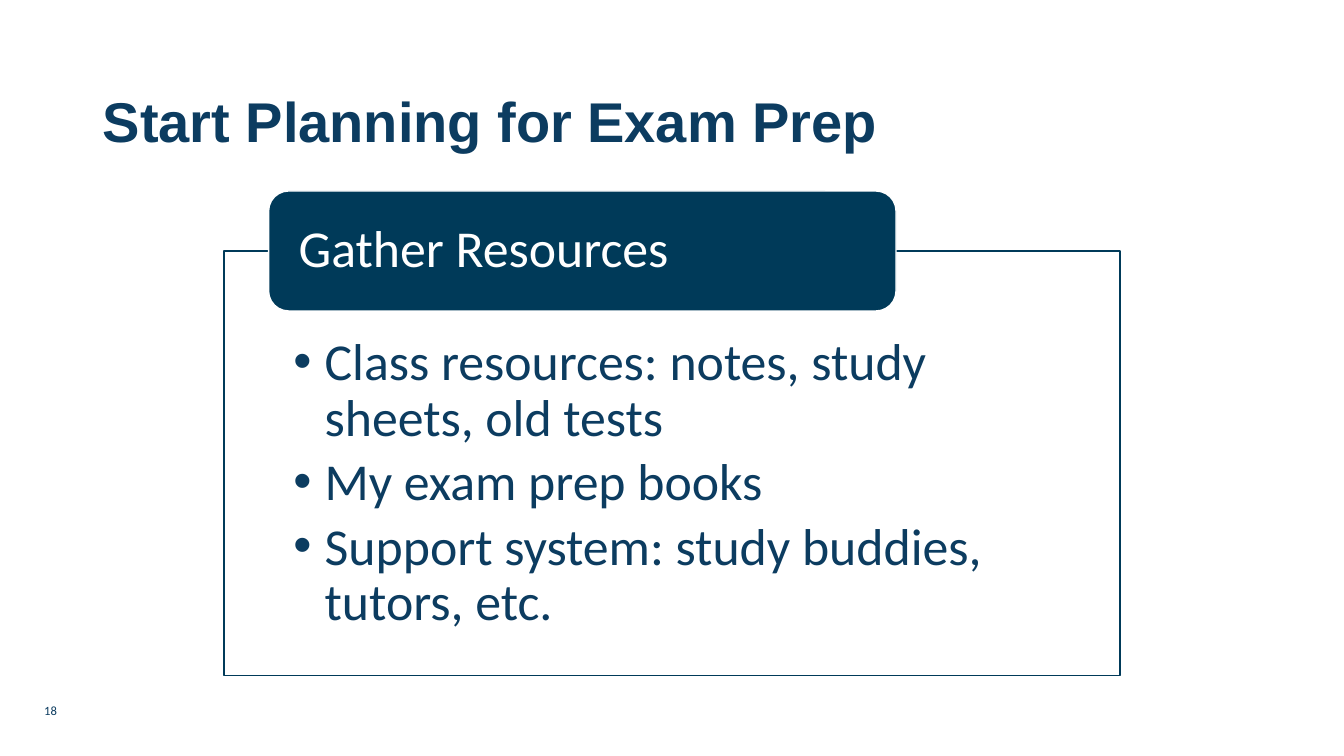
from pptx import Presentation
from pptx.dml.color import RGBColor
from pptx.enum.shapes import MSO_SHAPE
from pptx.enum.text import MSO_ANCHOR, MSO_AUTO_SIZE, PP_ALIGN
from pptx.util import Inches, Pt

COLORS = {"text": "0C3C60", "panel": "003A59", "white": "FFFFFF"}
RESOURCES = [
    "Class resources: notes, study sheets, old tests",
    "My exam prep books",
    "Support system: study buddies, tutors, etc.",
]


def rgb(name):
    return RGBColor.from_string(COLORS[name])


def place(shape, box):
    shape.left, shape.top, shape.width, shape.height = map(Inches, box)


def set_frame(frame, anchor, insets):
    """Fix the frame's size, anchor and insets (left, top, right, bottom)."""
    left, top, right, bottom = map(Inches, insets)
    settings = {
        "word_wrap": True, "auto_size": MSO_AUTO_SIZE.NONE, "vertical_anchor": anchor,
        "margin_left": left, "margin_top": top,
        "margin_right": right, "margin_bottom": bottom,
    }
    for key, value in settings.items():
        setattr(frame, key, value)


def format_paragraph(paragraph, size, color, font="Calibri", bold=False, spacing=0.9, after=0):
    layout = {
        "alignment": PP_ALIGN.LEFT, "line_spacing": spacing,
        "space_before": Pt(0), "space_after": Pt(after),
    }
    for key, value in layout.items():
        setattr(paragraph, key, value)
    for key, value in {"name": font, "size": Pt(size), "bold": bold}.items():
        setattr(paragraph.font, key, value)
    paragraph.font.color.rgb = rgb(color)


def outline(shape, fill, line):
    shape.fill.solid()
    shape.fill.fore_color.rgb = rgb(fill)
    shape.line.color.rgb = rgb(line)
    shape.line.width = Pt(1)


def add_title(slide, box):
    title = slide.shapes.title
    place(title, box)
    title.text_frame.text = "Start Planning for Exam Prep"
    set_frame(title.text_frame, MSO_ANCHOR.MIDDLE, (0.1, 0.05, 0.1, 0.05))
    format_paragraph(title.text_frame.paragraphs[0], 40, "text", "Arial", True)


def add_page_number(slide, box):
    number = slide.shapes.add_textbox(*map(Inches, box))
    number.text_frame.text = "18"
    set_frame(number.text_frame, MSO_ANCHOR.TOP, (0.1, 0.05, 0.1, 0.05))
    format_paragraph(number.text_frame.paragraphs[0], 9, "text", spacing=1.0)


def add_resource_panel(slide, box):
    """Outlined bullet list with a heading tab across its top edge."""
    left, top, width, height = box
    panel = slide.placeholders[1]
    place(panel, box)
    outline(panel, "white", "panel")
    set_frame(panel.text_frame, MSO_ANCHOR.TOP, (0.69, 0.84, 0.69, 0.29))
    panel.text_frame.text = "\n".join(RESOURCES)
    for item in panel.text_frame.paragraphs:
        properties = item._p.get_or_add_pPr()
        properties.set("marL", str(Inches(0.31)))
        properties.set("indent", str(-Inches(0.31)))
        format_paragraph(item, 37, "text", after=6)

    tab_height = 1.19
    tab_box = (left + width * 0.05, top - tab_height / 2, width * 0.7, tab_height)
    tab = slide.shapes.add_shape(MSO_SHAPE.ROUNDED_RECTANGLE, *map(Inches, tab_box))
    tab.shadow.inherit = False
    outline(tab, "panel", "white")
    tab.text_frame.text = "Gather Resources"
    set_frame(tab.text_frame, MSO_ANCHOR.MIDDLE, (0.24, 0, 0.24, 0))
    format_paragraph(tab.text_frame.paragraphs[0], 37, "white")


def main():
    deck = Presentation()
    deck.slide_width, deck.slide_height = Inches(13.33), Inches(7.5)
    slide = deck.slides.add_slide(deck.slide_layouts[1])
    add_title(slide, (0.92, 0.74, 11.5, 0.98))
    add_resource_panel(slide, (2.22, 2.49, 8.89, 4.21))
    add_page_number(slide, (0.34, 6.92, 2.25, 0.23))
    deck.save("out.pptx")


if __name__ == "__main__":
    main()
